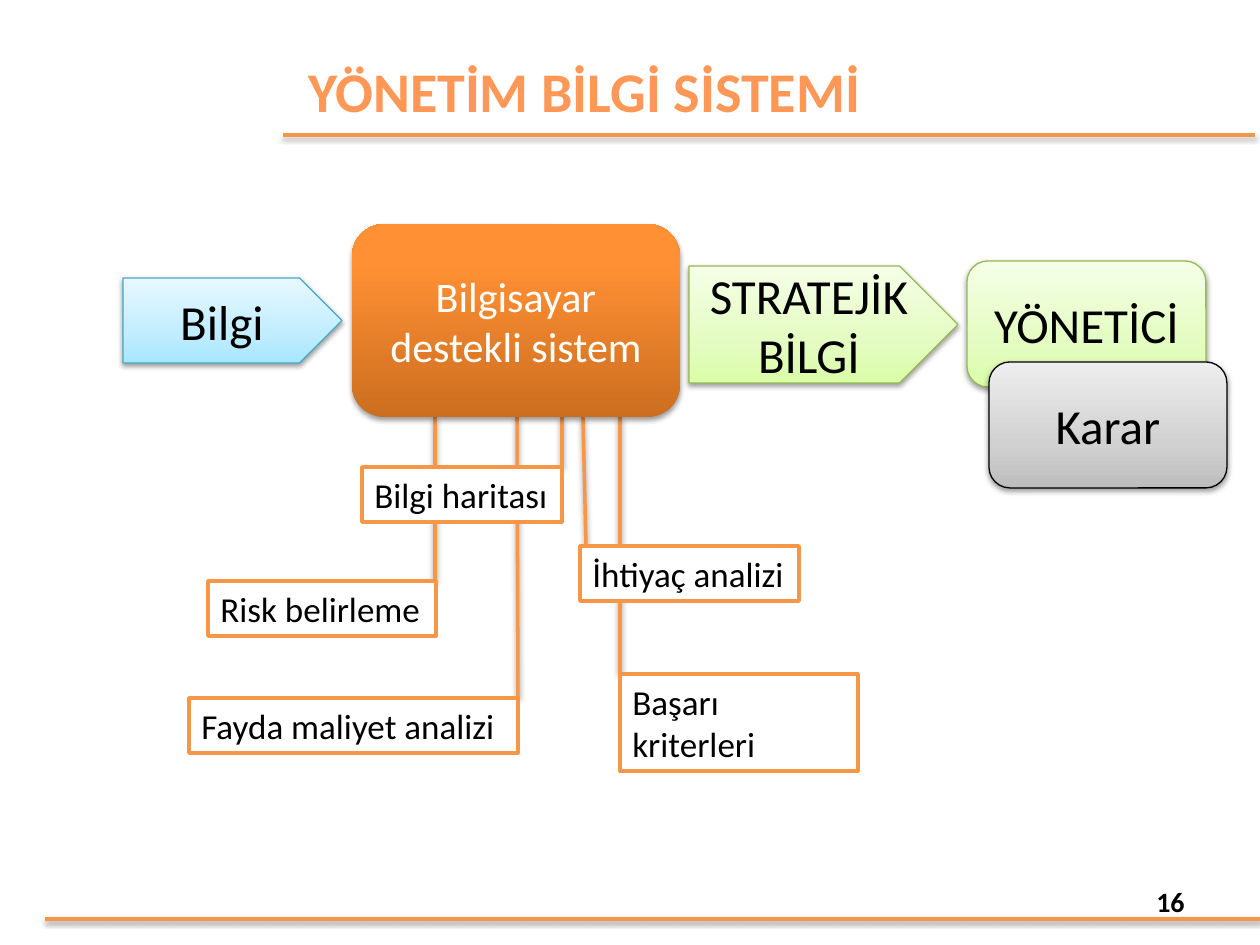
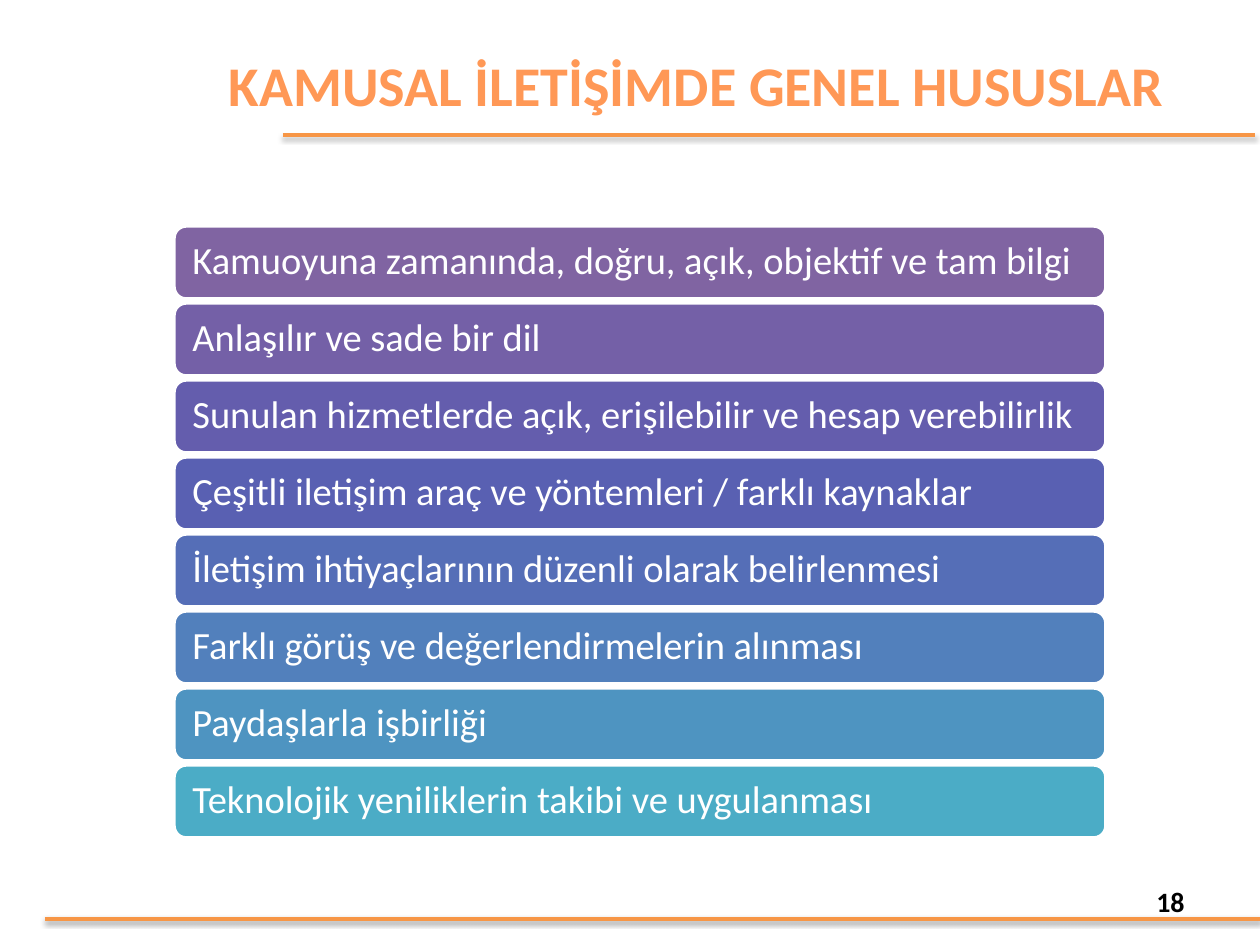
import pptx
import pptx.util
from lxml import etree
from pptx.dml.color import RGBColor
from pptx.enum.shapes import MSO_CONNECTOR, MSO_SHAPE
from pptx.enum.text import MSO_ANCHOR, MSO_AUTO_SIZE, PP_ALIGN
from pptx.oxml.ns import qn

COLOURS = {
    "accent": "F79646",
    "title": "FF9856",
    "black": "000000",
    "white": "FFFFFF",
    "aqua": "46AAC5",
    "green": "98B955",
}
GRADIENTS = {
    "aqua": [(0, "A7E6FF"), (35, "C1EDFF"), (100, "E7F8FF")],
    "orange": [(0, "CC6E20"), (80, "FF9034"), (100, "FF9136")],
    "green": [(0, "DAFDA7"), (35, "E4FCC2"), (100, "F5FFE7")],
    "grey": [(0, "BDBDBD"), (35, "D1D1D1"), (100, "EEEEEE")],
}
FONT = "Calibri"
RULES = [(45, 919, 1260, 919), (283, 135, 1255, 135)]
SYSTEM_BOTTOM = 417

FLOW = [
    ("Bilgi", MSO_SHAPE.PENTAGON, (123, 278, 219, 85), "aqua", "aqua", 28, "black"),
    ("Bilgisayar destekli sistem", MSO_SHAPE.ROUNDED_RECTANGLE,
     (352, 224, 328, 193), "orange", None, 24, "white"),
    ("STRATEJİK BİLGİ", MSO_SHAPE.PENTAGON,
     (689, 266, 269, 117), "green", "green", 28, "black"),
    ("YÖNETİCİ", MSO_SHAPE.ROUNDED_RECTANGLE,
     (967, 261, 239, 126), "green", "green", 28, "black"),
    ("Karar", MSO_SHAPE.ROUNDED_RECTANGLE,
     (989, 362, 238, 126), "grey", "black", 28, "black"),
]
ANALYSES = [
    ("Başarı kriterleri", (620, 674, 238, 97), 620, 620, True),
    ("İhtiyaç analizi", (580, 546, 219, 55), 583, 586, False),
    ("Bilgi haritası", (362, 467, 200, 55), 562, 562, False),
    ("Fayda maliyet analizi", (189, 698, 329, 55), 517, 518, True),
    ("Risk belirleme", (208, 581, 228, 55), 435, 435, False),
]
PRINCIPLES = [
    ("Kamuoyuna zamanında, doğru, açık, objektif ve tam bilgi", "8064A2"),
    ("Anlaşılır ve sade bir dil", "7460A7"),
    ("Sunulan hizmetlerde açık, erişilebilir ve hesap verebilirlik", "645DAD"),
    ("Çeşitli iletişim araç ve yöntemleri / farklı kaynaklar", "5960B2"),
    ("İletişim ihtiyaçlarının düzenli olarak belirlenmesi", "556EB7"),
    ("Farklı görüş ve değerlendirmelerin alınması", "5280BC"),
    ("Paydaşlarla işbirliği", "4E94C1"),
    ("Teknolojik yeniliklerin takibi ve uygulanması", "4BACC6"),
]


def px(length):
    """Turn px into EMU at 126 px to the inch."""
    return pptx.util.Emu(round(length * 914400 / 126))


def rgb(name):
    """Return the named colour."""
    return RGBColor.from_string(COLOURS[name])


def set_line(line, name, width):
    """Give an outline its colour and width in points."""
    line.color.rgb = rgb(name)
    line.width = pptx.util.Pt(width)


def set_text(shape, text, size, colour="black", bold=False,
             align=PP_ALIGN.LEFT, anchor=MSO_ANCHOR.MIDDLE, wrap=True):
    """Write one paragraph into a shape and format it."""
    frame = shape.text_frame
    frame.text = text
    frame.word_wrap = wrap
    frame.vertical_anchor = anchor
    para = frame.paragraphs[0]
    para.alignment = align
    font = para.runs[0].font
    font.name, font.size, font.bold = FONT, pptx.util.Pt(size), bold
    font.color.rgb = rgb(colour)
    return frame


def add_shadow(effects):
    """Put a soft downward shadow into an effect list."""
    shadow = etree.SubElement(effects, qn("a:outerShdw"), blurRad="40000",
                              dist="20000", dir="5400000", rotWithShape="0")
    colour = etree.SubElement(shadow, qn("a:srgbClr"), val=COLOURS["black"])
    etree.SubElement(colour, qn("a:alpha"), val="38000")


def set_gradient(shape, stops):
    """Fill a shape with stops that run from bottom to top."""
    shape.fill.gradient()
    shape.fill.gradient_angle = 90
    stop_list = shape.element.spPr.find(qn("a:gradFill")).find(qn("a:gsLst"))
    stop_list.clear()
    for position, colour in stops:
        stop = etree.SubElement(stop_list, qn("a:gs"), pos=str(position * 1000))
        etree.SubElement(stop, qn("a:srgbClr"), val=colour)


def add_rule(page, *ends):
    """Draw a shadowed accent line."""
    rule = page.shapes.add_connector(MSO_CONNECTOR.STRAIGHT, *map(px, ends))
    set_line(rule.line, "accent", 2)
    add_shadow(etree.SubElement(rule.element.spPr, qn("a:effectLst")))


def add_page(deck, title, title_place, number):
    """Add a slide with its title, two rules and page number."""
    page = deck.slides.add_slide(deck.slide_layouts[5])
    heading = page.shapes.title
    heading.left, heading.top, heading.width, heading.height = map(px, title_place)
    frame = set_text(heading, title, 32, "title", True, PP_ALIGN.CENTER)
    frame.auto_size = MSO_AUTO_SIZE.NONE
    for ends in RULES:
        add_rule(page, *ends)
    box = page.shapes.add_textbox(*map(px, (903, 876, 294, 50)))
    set_text(box, str(number), 16, bold=True, align=PP_ALIGN.RIGHT)
    return page


def add_step(page, text, kind, place, gradient, outline, size, colour):
    """Add a shadowed gradient shape of the flow."""
    step = page.shapes.add_shape(kind, *map(px, place))
    set_gradient(step, GRADIENTS[gradient])
    if outline:
        set_line(step.line, outline, 0.75)
    else:
        step.line.fill.background()
    step.shadow.inherit = False
    add_shadow(step.element.spPr.find(qn("a:effectLst")))
    set_text(step, text, size, colour, align=PP_ALIGN.CENTER)


def add_label(page, text, place, wrap):
    """Add a white text box with an accent outline."""
    label = page.shapes.add_textbox(*map(px, place))
    label.fill.solid()
    label.fill.fore_color.rgb = rgb("white")
    set_line(label.line, "accent", 2)
    frame = set_text(label, text, 20, anchor=MSO_ANCHOR.TOP, wrap=wrap)
    frame.auto_size = MSO_AUTO_SIZE.SHAPE_TO_FIT_TEXT


def add_bar(page, text, colour, top):
    """Add one rounded bar of the list."""
    bar = page.shapes.add_shape(MSO_SHAPE.ROUNDED_RECTANGLE,
                                *map(px, (174, top, 932, 73)))
    bar.shadow.inherit = False
    bar.fill.solid()
    bar.fill.fore_color.rgb = RGBColor.from_string(colour)
    set_line(bar.line, "white", 2)
    frame = set_text(bar, text, 22, "white")
    frame.margin_left = frame.margin_right = px(15)
    frame.paragraphs[0].line_spacing = 0.9


def build_system(deck):
    """Build the flow from information to decision."""
    page = add_page(deck, "YÖNETİM BİLGİ SİSTEMİ", (282, 16, 605, 149), 16)
    for _, place, start, end, _ in ANALYSES:
        add_rule(page, start, SYSTEM_BOTTOM, end, place[1])
    for step in FLOW:
        add_step(page, *step)
    for text, place, _, _, wrap in ANALYSES:
        add_label(page, text, place, wrap)


def build_principles(deck):
    """Build the list of communication principles."""
    page = add_page(deck, "KAMUSAL İLETİŞİMDE GENEL HUSUSLAR",
                    (205, 43, 983, 83), 18)
    for row, (text, colour) in enumerate(PRINCIPLES):
        add_bar(page, text, colour, 226 + 77 * row)


def main():
    """Build and save the deck."""
    deck = pptx.Presentation()
    deck.slide_width, deck.slide_height = px(1260), px(945)
    build_system(deck)
    build_principles(deck)
    deck.save("out.pptx")


if __name__ == "__main__":
    main()
